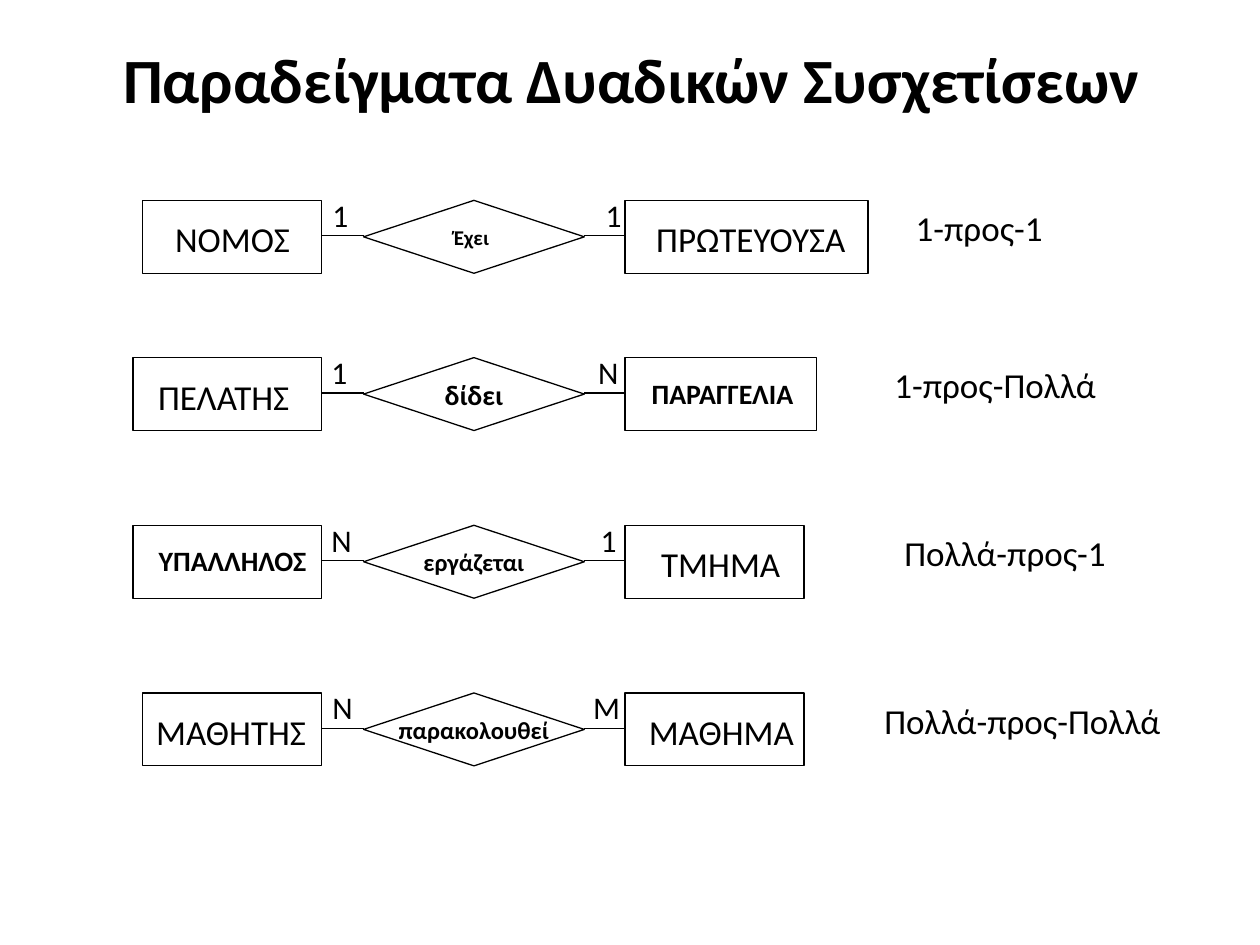
from dataclasses import dataclass

from lxml.etree import SubElement
from pptx import Presentation
from pptx.dml.color import RGBColor
from pptx.enum.shapes import MSO_CONNECTOR as Link, MSO_SHAPE as Form
from pptx.enum.text import MSO_ANCHOR as Anchor, MSO_AUTO_SIZE as Fit, PP_ALIGN as Align
from pptx.oxml.ns import qn
from pptx.util import Cm, Pt


@dataclass(frozen=True)
class Theme:
    font: str = "Calibri"
    ink: RGBColor = RGBColor(0, 0, 0)
    line: float = 0.75
    title: int = 36
    body: int = 20
    mark: int = 18
    small: int = 16
    tiny: int = 14
    least: int = 12


THEME = Theme()
BOX_H = 1.47
LEFT_END, RIGHT_START = 6.49, 12.6
ROMB_X, ROMB_W = 7.33, 4.45
LINK_DY = 0.71
HANG = 0.97


@dataclass
class Part:
    """An entity: box width, then its caption's place and style."""
    name: str
    wide: float
    x: float
    w: float
    size: int = THEME.body
    bold: bool = False
    mid: bool = False


@dataclass
class Row:
    """One binary relation; marks and kind are (text, x, width)."""
    top: float
    left: Part
    verb: tuple
    right: Part
    marks: tuple
    kind: tuple


ROWS = [
    Row(4.04, Part("ΝΟΜΟΣ", 3.61, 3.28, 2.84), ("Έχει ", THEME.least),
        Part("ΠΡΩΤΕΥΟΥΣΑ", 4.9, 12.98, 4.37),
        (("1", 6.45, 0.86), ("1", 11.96, 0.86)), ("1-προς-1", 18.21, 3.61)),
    Row(7.21, Part("ΠΕΛΑΤΗΣ", 3.81, 2.54, 3.94, mid=True), ("δίδει", THEME.small),
        Part("ΠΑΡΑΓΓΕΛΙΑ", 3.86, 12.42, 4.29, THEME.small, True, True),
        (("1", 6.43, 0.86), ("Ν", 11.81, 0.94)), ("1-προς-Πολλά", 17.78, 5.08)),
    Row(10.59, Part("ΥΠΑΛΛΗΛΟΣ", 3.81, 2.95, 3.53, THEME.small, True),
        ("εργάζεται", THEME.tiny),
        Part("ΤΜΗΜΑ", 3.61, 12.83, 3.4, mid=True),
        (("Ν", 6.43, 0.94), ("1", 11.86, 0.86)), ("Πολλά-προς-1", 17.98, 5.08)),
    Row(13.97, Part("ΜΑΘΗΤΗΣ", 3.61, 2.9, 3.56), ("παρακολουθεί", THEME.tiny),
        Part("ΜΑΘΗΜΑ", 3.61, 12.83, 3.48),
        (("Ν", 6.45, 0.94), ("Μ", 11.71, 1.07)), ("Πολλά-προς-Πολλά", 17.58, 6.55)),
]


def style(item, vals):
    for key, val in vals.items():
        setattr(item, key, val)


def write(shape, text, size, bold=False, mid=False, **frame):
    """Fill a shape with one styled paragraph; frame holds text frame values."""
    style(shape.text_frame, frame)
    para = shape.text_frame.paragraphs[0]
    para.alignment = Align.CENTER if mid else Align.LEFT
    run = para.add_run()
    run.text = text
    style(run.font, {"name": THEME.font, "size": Pt(size), "bold": bold})
    run.font.color.rgb = THEME.ink
    return para


def label(shapes, text, x, y, w, h, size, **form):
    box = shapes.add_textbox(Cm(x), Cm(y), Cm(w), Cm(h))
    return write(box, text, size, **form)


def ink_line(item):
    item.line.color.rgb = THEME.ink
    item.line.width = Pt(THEME.line)


def outline(shapes, form, x, y, w):
    shape = shapes.add_shape(form, Cm(x), Cm(y), Cm(w), Cm(BOX_H))
    shape.shadow.inherit = False
    shape.fill.background()
    ink_line(shape)
    return shape


def link(shapes, start, end, y):
    line = shapes.add_connector(Link.STRAIGHT, Cm(start), Cm(y), Cm(end), Cm(y))
    ink_line(line)
    SubElement(line._element.spPr, qn("a:effectLst"))


def entity(shapes, part, x, top):
    outline(shapes, Form.RECTANGLE, x, top, part.wide)
    small = part.size == THEME.small
    dy, h = (0.25, 0.94) if small else (0.23, 1.11)
    label(shapes, part.name, part.x, top + dy, part.w, h, part.size,
          bold=part.bold, mid=part.mid, word_wrap=part.mid,
          auto_size=Fit.SHAPE_TO_FIT_TEXT)


def relation(shapes, row):
    entity(shapes, row.left, LEFT_END - row.left.wide, row.top)
    entity(shapes, row.right, RIGHT_START, row.top)
    romb = outline(shapes, Form.DIAMOND, ROMB_X, row.top, ROMB_W)
    write(romb, *row.verb, bold=True, mid=True,
          word_wrap=False, vertical_anchor=Anchor.MIDDLE)
    for start, end in ((ROMB_X, LEFT_END), (RIGHT_START, ROMB_X + ROMB_W)):
        link(shapes, start, end, row.top + LINK_DY)
    for text, x, w in row.marks:
        label(shapes, text, x, row.top - 0.22, w, 1.02, THEME.mark,
              word_wrap=False, auto_size=Fit.SHAPE_TO_FIT_TEXT)
    text, x, w = row.kind
    para = label(shapes, text, x, row.top, w, 1.27, THEME.body, word_wrap=True)
    props = para._p.get_or_add_pPr()
    props.set("marL", str(Cm(HANG)))
    props.set("indent", str(-Cm(HANG)))


def main():
    deck = Presentation()
    style(deck, {"slide_width": Cm(25.4), "slide_height": Cm(19.05)})
    slide = deck.slides.add_slide(deck.slide_layouts[6])
    for row in ROWS:
        relation(slide.shapes.add_group_shape().shapes, row)
    label(slide.shapes, "Παραδείγματα Δυαδικών Συσχετίσεων", 1.3, 0.33, 22.86, 2.51,
          THEME.title, bold=True, mid=True, word_wrap=True,
          vertical_anchor=Anchor.MIDDLE)
    deck.save("out.pptx")


if __name__ == "__main__":
    main()
